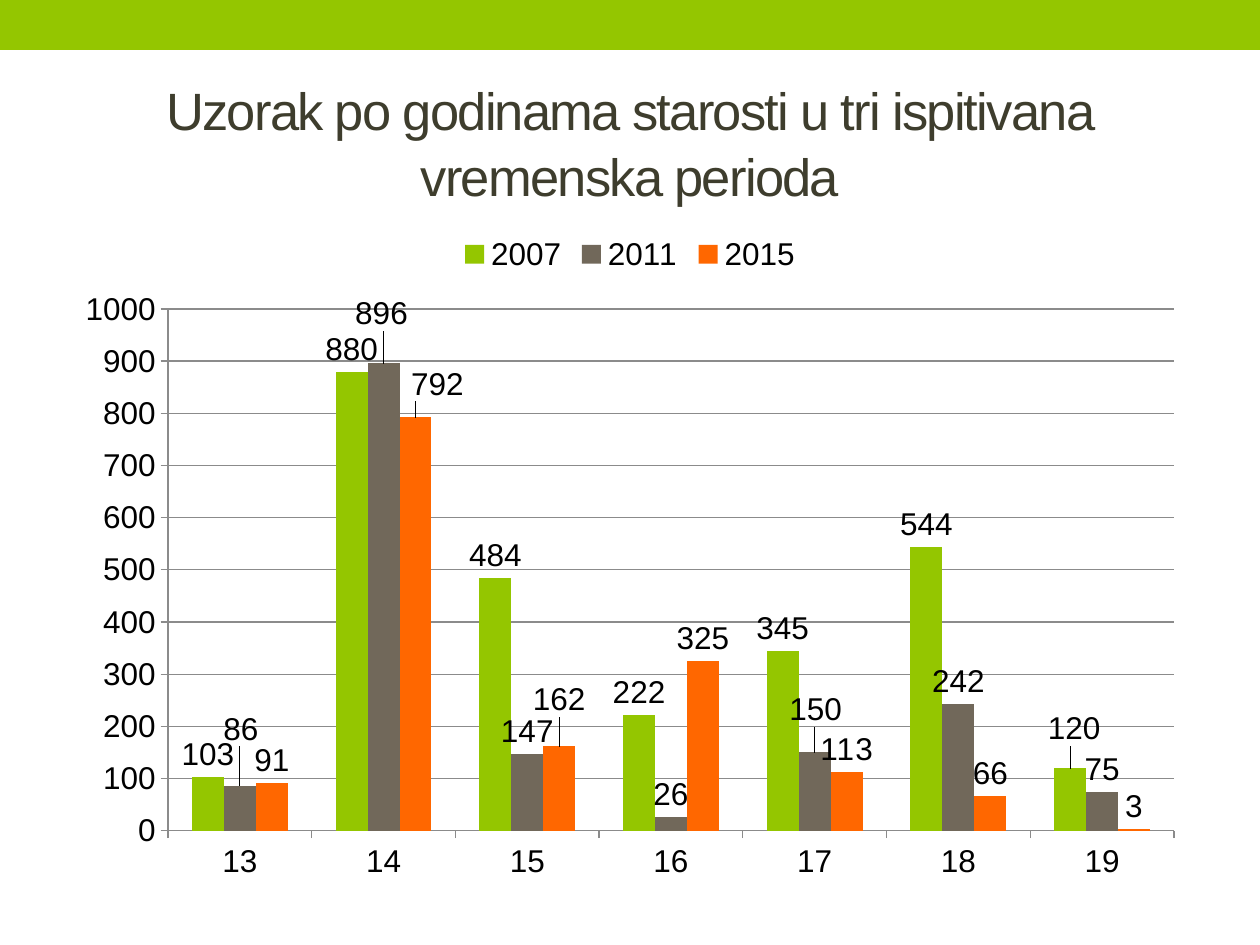
from lxml import etree
from pptx import Presentation
from pptx.chart.data import CategoryChartData
from pptx.dml.color import RGBColor
from pptx.enum.chart import XL_CHART_TYPE, XL_LABEL_POSITION, XL_LEGEND_POSITION, XL_TICK_MARK
from pptx.enum.shapes import MSO_SHAPE
from pptx.enum.text import MSO_ANCHOR, PP_ALIGN
from pptx.oxml.ns import qn
from pptx.util import Emu, Pt

PX = 914400 // 126
GREEN = RGBColor(0x94, 0xC6, 0x00)
BROWN = RGBColor(0x71, 0x68, 0x5A)
ORANGE = RGBColor(0xFF, 0x67, 0x00)
OLIVE = RGBColor(0x3E, 0x3D, 0x2D)
BLACK = RGBColor(0, 0, 0)
GRAY = RGBColor(0x8B, 0x8B, 0x8B)
FONT = "Arial"
COLUMNS = XL_CHART_TYPE.COLUMN_CLUSTERED
OUTSIDE_END = XL_LABEL_POSITION.OUTSIDE_END
LEGEND_TOP = XL_LEGEND_POSITION.TOP
TICK_OUT, TICK_NONE = XL_TICK_MARK.OUTSIDE, XL_TICK_MARK.NONE
RECT = MSO_SHAPE.RECTANGLE
MIDDLE, CENTER = MSO_ANCHOR.MIDDLE, PP_ALIGN.CENTER

CHART_BOX = (63, 221, 1134, 671)
PLOT_BOX = (168, 309, 1006, 522)
AGES = ["13", "14", "15", "16", "17", "18", "19"]
SERIES = [
    ("2007", GREEN, (103, 880, 484, 222, 345, 544, 120), {6: (4, -17)}),
    ("2011", BROWN, (86, 896, 147, 26, 150, 242, 75),
     {0: (1, -34), 1: (-2, -27), 4: (1, -20)}),
    ("2015", ORANGE, (91, 792, 162, 325, 113, 66, 3),
     {1: (22, -11), 2: (0, -24)}),
]


def px(*lengths):
    return [Emu(n * PX) for n in lengths]


def set_attrs(obj, values):
    for name, value in values.items():
        setattr(obj, name, value)


def set_font(font, size, color):
    set_attrs(font, {"name": FONT, "size": Pt(size), "bold": False})
    font.color.rgb = color


def manual_layout(values):
    layout = etree.Element(qn("c:layout"))
    manual = etree.SubElement(layout, qn("c:manualLayout"))
    for tag, value in values.items():
        etree.SubElement(manual, qn(f"c:{tag}")).set("val", str(value))
    return layout


def add_band(slide, box, color):
    sp = slide.shapes.add_shape(RECT, *px(*box))
    sp.shadow.inherit = False
    sp.fill.solid()
    sp.fill.fore_color.rgb = color
    sp.line.fill.background()


def add_title(slide, box, text):
    tf = slide.shapes.add_textbox(*px(*box)).text_frame
    set_attrs(tf, {"word_wrap": True, "vertical_anchor": MIDDLE})
    p = tf.paragraphs[0]
    set_attrs(p, {"alignment": CENTER, "line_spacing": 1.05})
    r = p.add_run()
    r.text = text
    set_font(r.font, 30, OLIVE)
    r.font._element.set("spc", "-100")


def place_plot(chart):
    x, y, w, h = PLOT_BOX
    left, top, width, height = CHART_BOX
    layout = manual_layout({
        "layoutTarget": "inner", "xMode": "edge", "yMode": "edge",
        "x": round((x - left) / width, 4), "y": round((y - top) / height, 4),
        "w": round(w / width, 4), "h": round(h / height, 4),
    })
    area = chart._chartSpace.find(f".//{qn('c:plotArea')}")
    for old in area.findall(qn("c:layout")):
        area.remove(old)
    area.insert(0, layout)


def style_series(series, color, shifts):
    series.format.fill.solid()
    series.format.fill.fore_color.rgb = color
    series.invert_if_negative = False
    labels = series.data_labels
    set_attrs(labels, {"show_value": True, "position": OUTSIDE_END})
    set_font(labels.font, 18, BLACK)
    for index in shifts:
        label = series.points[index].data_label
        set_font(label.font, 18, BLACK)
        label.position = OUTSIDE_END
    for item in series._element.iter(qn("c:dLbl")):
        idx = item.find(qn("c:idx"))
        dx, dy = shifts[int(idx.get("val"))]
        idx.addnext(manual_layout({
            "x": round(dx / CHART_BOX[2], 4),
            "y": round(dy / CHART_BOX[3], 4),
        }))


def style_axes(chart):
    value_axis = chart.value_axis
    set_attrs(value_axis, {"minimum_scale": 0, "maximum_scale": 1000,
                           "major_unit": 100, "has_major_gridlines": True})
    for axis in (chart.category_axis, value_axis):
        set_attrs(axis, {"major_tick_mark": TICK_OUT,
                         "minor_tick_mark": TICK_NONE})
        set_font(axis.tick_labels.font, 18, BLACK)
    for part in (chart.category_axis, value_axis, value_axis.major_gridlines):
        part.format.line.color.rgb = GRAY
        part.format.line.width = Pt(0.75)


def add_column_chart(slide):
    data = CategoryChartData()
    data.categories = AGES
    for name, _, values, _ in SERIES:
        data.add_series(name, values)
    chart = slide.shapes.add_chart(COLUMNS, *px(*CHART_BOX), data).chart
    set_attrs(chart, {"has_title": False, "has_legend": True})
    set_font(chart.font, 18, BLACK)
    set_attrs(chart.legend, {"position": LEGEND_TOP, "include_in_layout": False})
    set_font(chart.legend.font, 18, BLACK)
    plot = chart.plots[0]
    set_attrs(plot, {"gap_width": 150, "overlap": 0, "vary_by_categories": False})
    for series, (_, color, _, shifts) in zip(plot.series, SERIES):
        style_series(series, color, shifts)
    style_axes(chart)
    place_plot(chart)


def main():
    prs = Presentation()
    prs.slide_width, prs.slide_height = px(1260, 945)
    slide = prs.slides.add_slide(prs.slide_layouts[6])
    add_band(slide, (0, 0, 1260, 50), GREEN)
    add_title(slide, (63, 73, 1134, 136),
              "Uzorak po godinama starosti u tri ispitivana vremenska perioda")
    add_column_chart(slide)
    prs.save("out.pptx")


if __name__ == "__main__":
    main()
